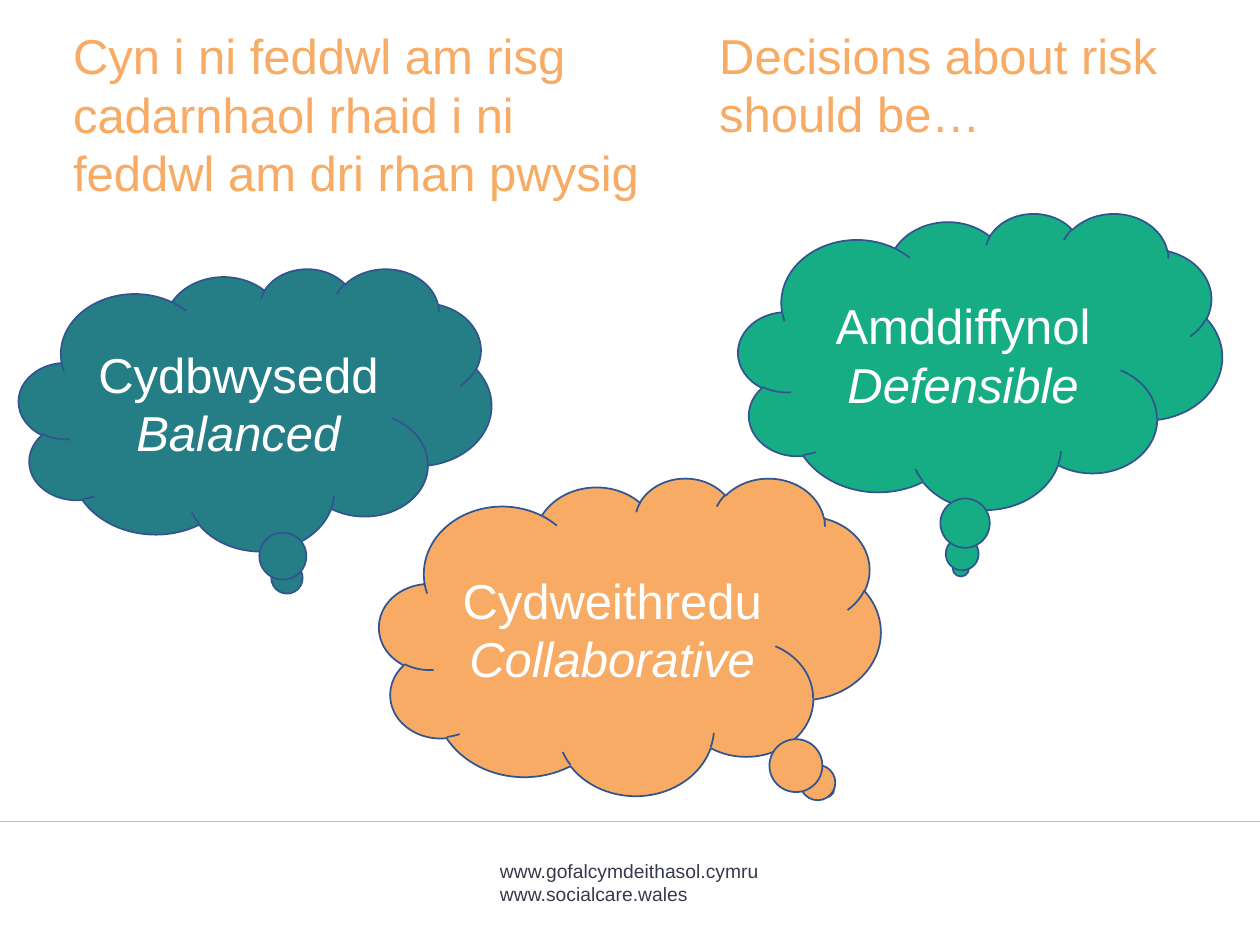
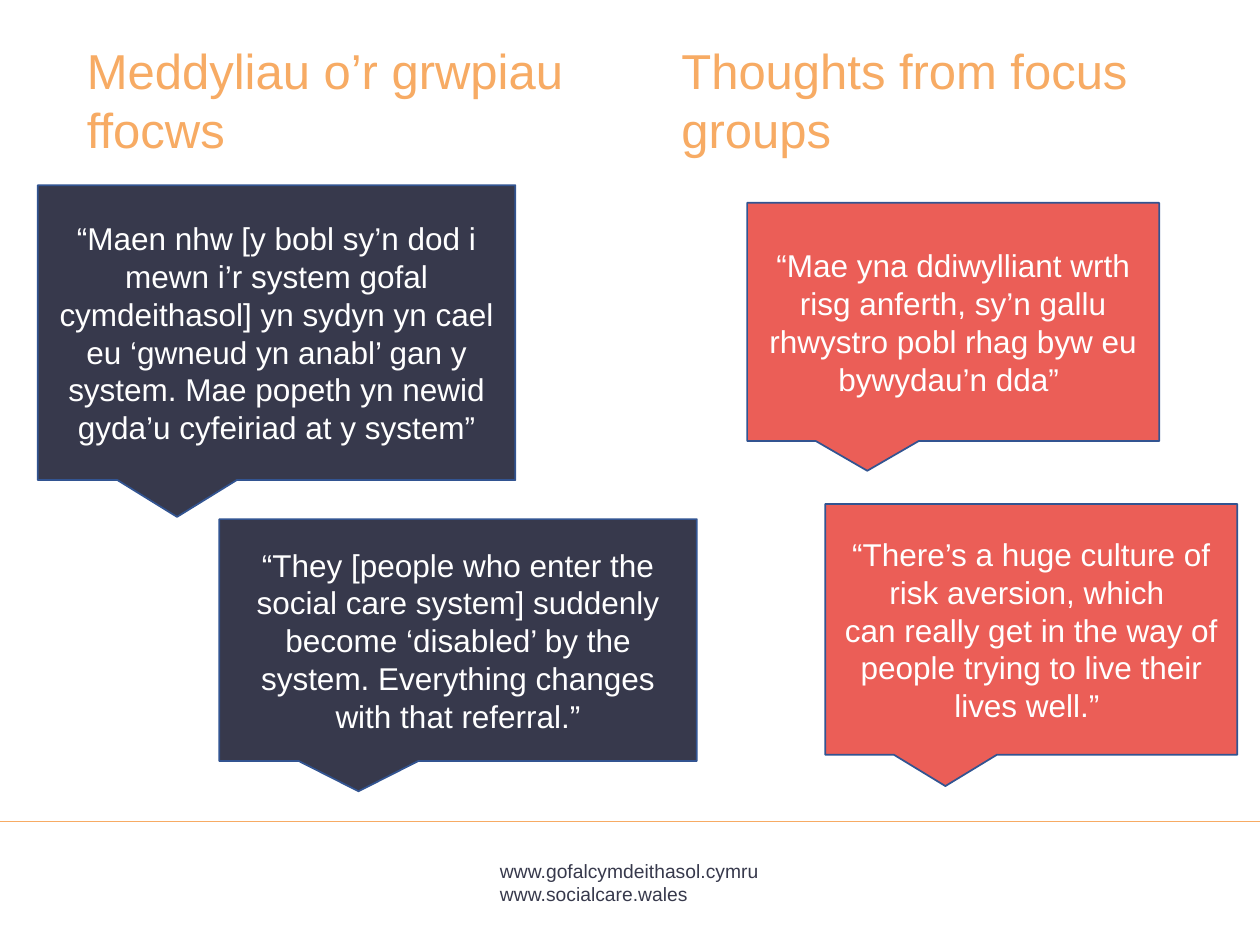
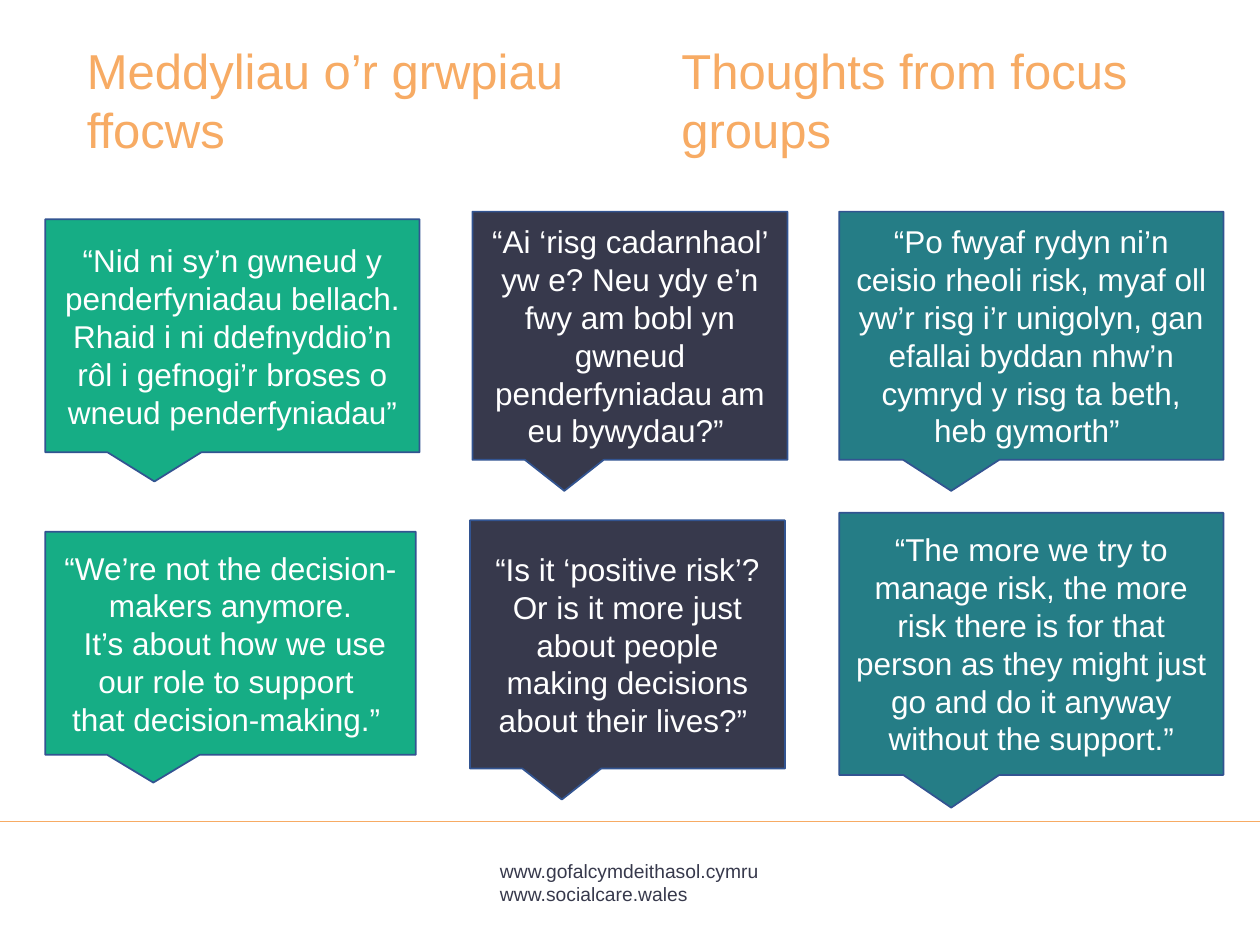
from pptx import Presentation
from pptx.dml.color import RGBColor
from pptx.enum.shapes import MSO_CONNECTOR, MSO_SHAPE
from pptx.enum.text import MSO_ANCHOR, MSO_AUTO_SIZE, PP_ALIGN
from pptx.oxml.ns import qn
from pptx.util import Inches, Pt

FONT = "Arial"
ORANGE, TEAL, GREEN = "F7AB64", "257D86", "16AD85"
NAVY, CORAL, BLUE, WHITE = "37394C", "EB5E57", "325491", "FFFFFF"
FOCUS = (
    ("Meddyliau o’r grwpiau ffocws", (0.59, 0.27, 4.41, 0.85)),
    ("Thoughts from focus groups", (5.31, 0.27, 3.89, 0.99)),
)


def rgb(code):
    return RGBColor.from_string(code)


def inches(box):
    return [Inches(n) for n in box]


def write(frame, text, size, color, align=PP_ALIGN.LEFT, anchor=MSO_ANCHOR.TOP):
    """Fill a text frame, one paragraph for each line of text."""
    frame.text = text
    frame.word_wrap = True
    frame.auto_size = MSO_AUTO_SIZE.NONE
    frame.vertical_anchor = anchor
    for para in frame.paragraphs:
        para.alignment = align
        para.font.name = FONT
        para.font.size = Pt(size)
        para.font.color.rgb = rgb(color)


def add_text(slide, text, box, size, color):
    write(slide.shapes.add_textbox(*inches(box)).text_frame, text, size, color)


def add_footer(slide):
    rule = slide.shapes.add_connector(
        MSO_CONNECTOR.STRAIGHT, *inches((0, 6.52, 10, 6.52)))
    rule.line.color.rgb = rgb(ORANGE)
    rule.line.width = Pt(1)
    props = rule.element.spPr
    props.append(props.makeelement(qn("a:effectLst"), {}))
    add_text(slide, "www.gofalcymdeithasol.cymru\nwww.socialcare.wales",
             (3.87, 6.77, 2.3, 0.46), 11, NAVY)


def add_slide(deck, welsh, english):
    """Start a slide with its footer and a heading in each language."""
    slide = deck.slides.add_slide(deck.slide_layouts[5])
    add_footer(slide)
    title = slide.shapes.title
    text, box = welsh
    title.left, title.top, title.width, title.height = inches(box)
    write(title.text_frame, text, 28, ORANGE)
    add_text(slide, *english, 28, ORANGE)
    return slide


def add_bubble(slide, kind, text, box, fill, size):
    shape = slide.shapes.add_shape(kind, *inches(box))
    shape.shadow.inherit = False
    shape.fill.solid()
    shape.fill.fore_color.rgb = rgb(fill)
    shape.line.color.rgb = rgb(BLUE)
    shape.line.width = Pt(1)
    write(shape.text_frame, text, size, WHITE, PP_ALIGN.CENTER, MSO_ANCHOR.MIDDLE)
    return shape


def add_cloud(slide, welsh, english, box, fill, tail):
    cloud = add_bubble(slide, MSO_SHAPE.CLOUD_CALLOUT, f"{welsh}\n{english}",
                       box, fill, 28)
    cloud.adjustments[0], cloud.adjustments[1] = tail
    cloud.text_frame.paragraphs[1].font.italic = True


def add_quote(slide, text, box, fill):
    add_bubble(slide, MSO_SHAPE.RECTANGULAR_CALLOUT, text, box, fill, 18)


def add_risk(deck):
    slide = add_slide(
        deck,
        ("Cyn i ni feddwl am risg cadarnhaol rhaid i ni feddwl am dri rhan pwysig",
         (0.48, 0.15, 4.76, 1.87)),
        ("Decisions about risk should be…", (5.61, 0.15, 3.72, 1.81)))
    clouds = (
        ("Cydbwysedd", "Balanced", (0.15, 2.13, 3.75, 2.24), TEAL, (0.07, 0.62)),
        ("Amddiffynol", "Defensible", (5.86, 1.69, 3.84, 2.35), GREEN, (-0.04, 0.7)),
        ("Cydweithredu", "Collaborative", (3.01, 3.79, 3.98, 2.52), ORANGE,
         (0.39, 0.48)),
    )
    for cloud in clouds:
        add_cloud(slide, *cloud)


def add_quotes(deck, quotes):
    slide = add_slide(deck, *FOCUS)
    for quote in quotes:
        add_quote(slide, *quote)


def main():
    deck = Presentation()
    deck.slide_width, deck.slide_height = Inches(10), Inches(7.5)
    add_risk(deck)
    add_quotes(deck, (
        ("“Maen nhw [y bobl sy’n dod i mewn i’r system gofal cymdeithasol] yn sydyn "
         "yn cael eu ‘gwneud yn anabl’ gan y system. Mae popeth yn newid gyda’u "
         "cyfeiriad at y system”", (0.3, 1.47, 3.79, 2.34), NAVY),
        ("“They [people who enter the social care system] suddenly become ‘disabled’ "
         "by the\nsystem. Everything changes with that referral.”",
         (1.74, 4.12, 3.79, 1.92), NAVY),
        ("“Mae yna ddiwylliant wrth risg anferth, sy’n gallu rhwystro pobl rhag byw "
         "eu bywydau’n dda” ", (5.93, 1.61, 3.27, 1.89), CORAL),
        ("“There’s a huge culture of risk aversion, which \ncan really get in the "
         "way of people trying to live their lives well.” ",
         (6.55, 4, 3.27, 1.99), CORAL),
    ))
    add_quotes(deck, (
        ("“Nid ni sy’n gwneud y penderfyniadau bellach. Rhaid i ni ddefnyddio’n rôl "
         "i gefnogi’r broses o wneud penderfyniadau”",
         (0.36, 1.74, 2.97, 1.85), GREEN),
        ("“We’re not the decision-makers anymore.\n It’s about how we use our role "
         "to support \nthat decision-making.” ", (0.36, 4.22, 2.94, 1.77), GREEN),
        ("“Ai ‘risg cadarnhaol’ yw e? Neu ydy e’n fwy am bobl yn gwneud "
         "penderfyniadau am eu bywydau?” ", (3.75, 1.68, 2.5, 1.97), NAVY),
        ("“Is it ‘positive risk’? Or is it more just about people making decisions "
         "about their lives?” ", (3.73, 4.13, 2.5, 1.97), NAVY),
        ("“Po fwyaf rydyn ni’n ceisio rheoli risk, myaf oll yw’r risg i’r unigolyn, "
         "gan efallai byddan nhw’n cymryd y risg ta beth, heb gymorth” ",
         (6.66, 1.68, 3.05, 1.97), TEAL),
        ("“The more we try to manage risk, the more\nrisk there is for that person "
         "as they might just go and do it anyway without the support.”",
         (6.66, 4.07, 3.05, 2.08), TEAL),
    ))
    deck.save("out.pptx")


if __name__ == "__main__":
    main()
